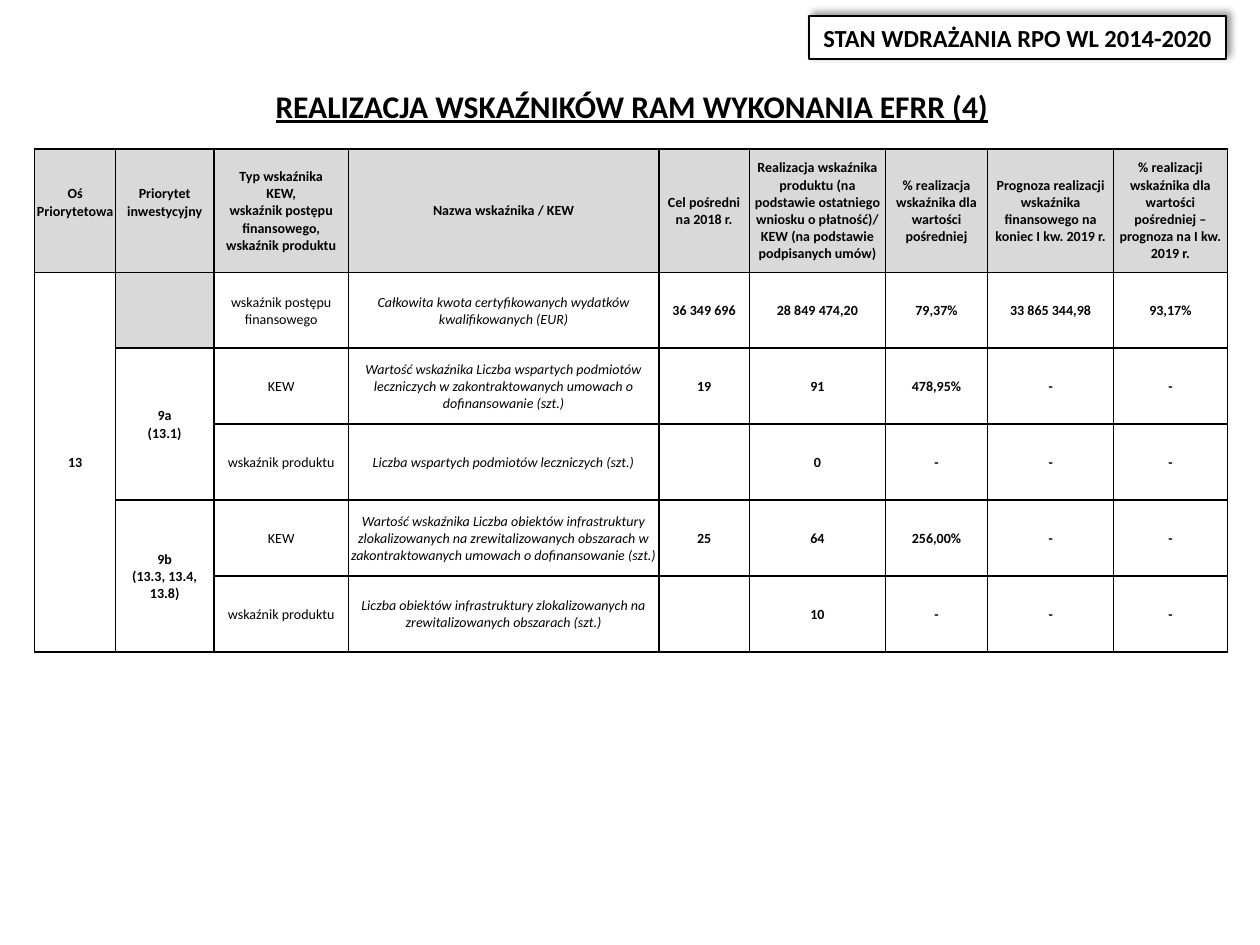
from dataclasses import dataclass

from pptx import Presentation
from pptx.dml.color import RGBColor as Rgb
from pptx.enum.shapes import MSO_SHAPE as Shape
from pptx.enum.text import MSO_ANCHOR as Anchor, MSO_AUTO_SIZE as AutoSize, PP_ALIGN as Align
from pptx.oxml import parse_xml
from pptx.oxml.ns import nsdecls
from pptx.util import Cm, Pt

TITLE = "REALIZACJA WSKAŹNIKÓW RAM WYKONANIA EFRR (4)"
BADGE = "STAN WDRAŻANIA RPO WL 2014-2020"
HEADERS = [
    "Oś Priorytetowa",
    "Priorytet inwestycyjny",
    "Typ wskaźnika\vKEW,\vwskaźnik postępu finansowego,\vwskaźnik produktu",
    "Nazwa wskaźnika / KEW",
    "Cel pośredni na 2018 r.",
    "Realizacja wskaźnika produktu (na podstawie ostatniego wniosku o płatność)/ "
    "KEW (na podstawie podpisanych umów)",
    "% realizacja wskaźnika dla wartości pośredniej",
    "Prognoza realizacji wskaźnika finansowego na koniec I kw. 2019 r.",
    "% realizacji wskaźnika dla wartości pośredniej – prognoza na I kw. 2019 r.",
]
INDICATORS = [
    ("13", "", "wskaźnik postępu finansowego",
     "Całkowita kwota certyfikowanych wydatków kwalifikowanych (EUR)",
     "36 349 696", "28 849 474,20", "79,37%", "33 865 344,98", "93,17%"),
    ("", "9a\v(13.1)", "KEW",
     "Wartość wskaźnika Liczba wspartych podmiotów leczniczych "
     "w zakontraktowanych umowach o dofinansowanie (szt.)",
     "19", "91", "478,95%", "-", "-"),
    ("", "", "wskaźnik produktu", "Liczba wspartych podmiotów leczniczych (szt.)",
     "", "0", "-", "-", "-"),
    ("", "9b\v(13.3, 13.4, 13.8)", "KEW",
     "Wartość wskaźnika Liczba obiektów infrastruktury zlokalizowanych na "
     "zrewitalizowanych obszarach w zakontraktowanych umowach o dofinansowanie (szt.)",
     "25", "64", "256,00%", "-", "-"),
    ("", "", "wskaźnik produktu",
     "Liczba obiektów infrastruktury zlokalizowanych na zrewitalizowanych obszarach (szt.)",
     "", "10", "-", "-", "-"),
]
MERGES = [((1, 0), (5, 0)), ((2, 1), (3, 1)), ((4, 1), (5, 1))]
COLUMN_WIDTHS = [1.63, 1.98, 2.72, 6.25, 1.83, 2.74, 2.06, 2.54, 2.29]
HEADER_HEIGHT, INDICATOR_HEIGHT = 2.49, 1.53
TYPE_COLUMN, NAME_COLUMN = 2, 3
RAISED_HEADERS = (0, 1)


@dataclass(frozen=True)
class Theme:
    font: str = "Calibri"
    ink: Rgb = Rgb(0, 0, 0)
    paper: Rgb = Rgb(255, 255, 255)
    shade: Rgb = Rgb(0xD9, 0xD9, 0xD9)
    title: Pt = Pt(18)
    badge: Pt = Pt(14)
    table: Pt = Pt(8)
    line: Pt = Pt(1)


theme = Theme()


def paint(part, colour):
    part.fill.solid()
    part.fill.fore_color.rgb = colour


def style_text(frame, size, bold=True, italic=False, underline=False):
    for paragraph in frame.paragraphs:
        paragraph.alignment = Align.CENTER
        for run in paragraph.runs:
            font = run.font
            font.name, font.size, font.color.rgb = theme.font, size, theme.ink
            font.bold, font.italic, font.underline = bold, italic, underline


def add_borders(cell):
    for position, side in enumerate("LRTB"):
        cell._tc.get_or_add_tcPr().insert(position, parse_xml(
            f'<a:ln{side} {nsdecls("a")} w="{theme.line}"><a:solidFill>'
            f'<a:srgbClr val="{theme.ink}"/></a:solidFill></a:ln{side}>'))


def add_title(slide):
    title = slide.shapes.title
    title.left, title.top, title.width, title.height = Cm(0.74), Cm(1.52), Cm(24), Cm(1.14)
    frame = title.text_frame
    frame.text = TITLE
    frame.word_wrap = True
    frame.auto_size = AutoSize.SHAPE_TO_FIT_TEXT
    frame.vertical_anchor = Anchor.TOP
    frame.paragraphs[0].line_spacing = 1.14
    style_text(frame, theme.title, underline=True)


def add_badge(slide):
    badge = slide.shapes.add_shape(Shape.RECTANGLE, Cm(16.31), Cm(0.33), Cm(8.41), Cm(0.86))
    paint(badge, theme.paper)
    badge.line.color.rgb, badge.line.width = theme.ink, theme.line
    badge._element.spPr.append(parse_xml(
        f'<a:effectLst {nsdecls("a")}><a:outerShdw blurRad="{Pt(4)}" dist="{Pt(3)}" '
        f'dir="{315 * 60000}" algn="bl" rotWithShape="0"><a:srgbClr val="{theme.ink}">'
        '<a:alpha val="40000"/></a:srgbClr></a:outerShdw></a:effectLst>'))
    frame = badge.text_frame
    frame.text = BADGE
    frame.word_wrap = False
    frame.auto_size = AutoSize.SHAPE_TO_FIT_TEXT
    style_text(frame, theme.badge)


def add_indicators(slide):
    rows = [HEADERS, *INDICATORS]
    heights = [HEADER_HEIGHT] + [INDICATOR_HEIGHT] * len(INDICATORS)
    table = slide.shapes.add_table(
        len(rows), len(HEADERS), Cm(0.7), Cm(3),
        Cm(sum(COLUMN_WIDTHS)), Cm(sum(heights))).table
    table.first_row = table.horz_banding = False
    for column, width in zip(table.columns, COLUMN_WIDTHS):
        column.width = Cm(width)
    for row, height in zip(table.rows, heights):
        row.height = Cm(height)
    for r, texts in enumerate(rows):
        for c, text in enumerate(texts):
            cell = table.cell(r, c)
            header = r == 0
            cell.text_frame.text = text
            cell.vertical_anchor = Anchor.MIDDLE
            cell.margin_left = cell.margin_right = cell.margin_top = Cm(0.02)
            cell.margin_bottom = Cm(0.34) if header and c in RAISED_HEADERS else Cm(0)
            paint(cell, theme.shade if header or (r, c) == (1, 1) else theme.paper)
            add_borders(cell)
            style_text(cell.text_frame, theme.table,
                       bold=header or c not in (TYPE_COLUMN, NAME_COLUMN),
                       italic=not header and c == NAME_COLUMN)
    for first, last in MERGES:
        table.cell(*first).merge(table.cell(*last))


def main():
    deck = Presentation()
    deck.slide_width, deck.slide_height = Cm(25.4), Cm(19.05)
    slide = deck.slides.add_slide(deck.slide_layouts.get_by_name("Title Only"))
    add_title(slide)
    add_badge(slide)
    add_indicators(slide)
    deck.save("out.pptx")


if __name__ == "__main__":
    main()
